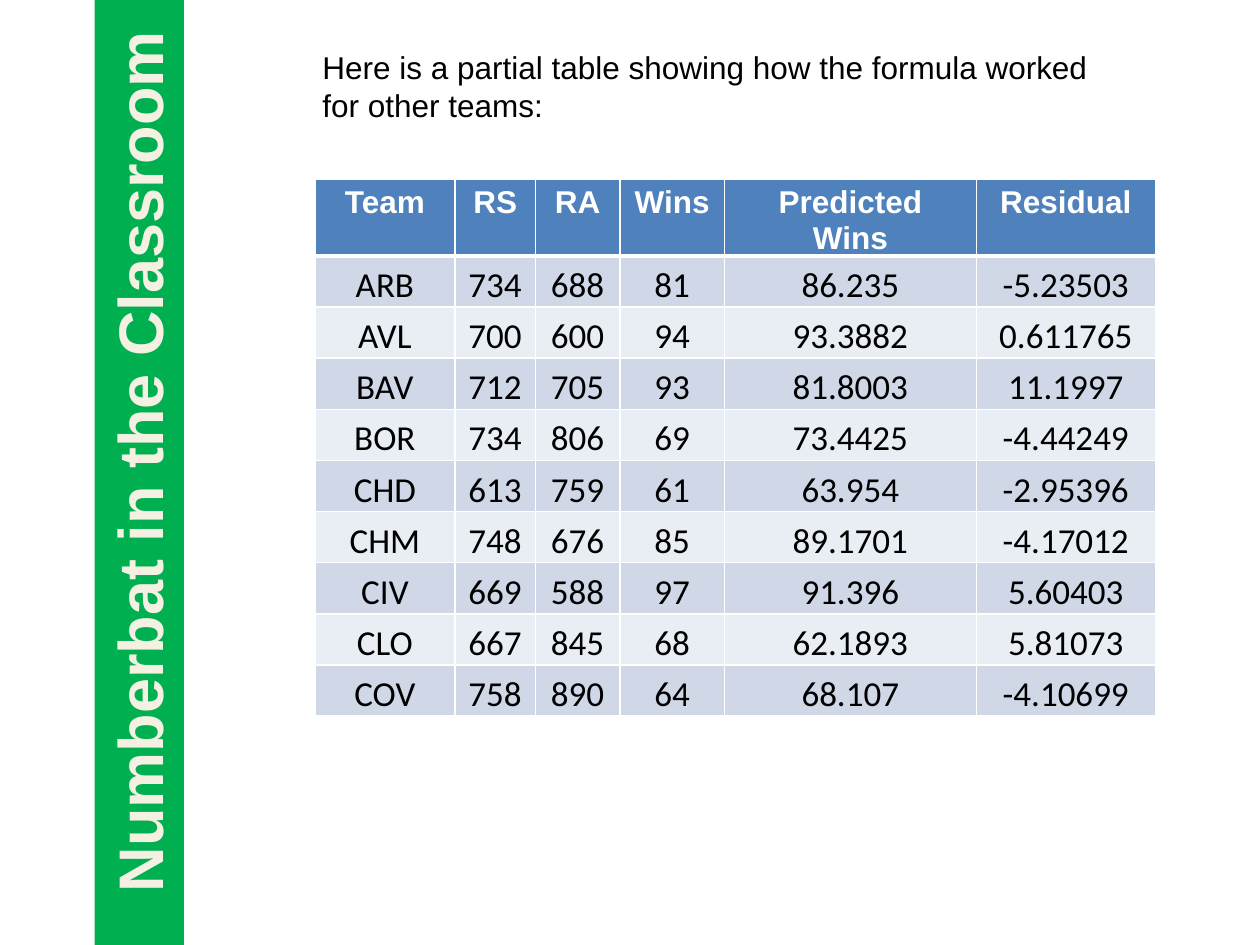
from dataclasses import dataclass

from lxml import etree
from pptx import Presentation
from pptx import util as u
from pptx.dml.color import RGBColor
from pptx.enum import text
from pptx.oxml import ns


@dataclass(frozen=True)
class Theme:
    banner: str = "00B050"
    banner_text: str = "F4F1E3"
    banner_outline: str = "054697"
    header: str = "4F81BD"
    bands: tuple = ("D0D8E8", "E9EDF4")
    light: str = "FFFFFF"
    dark: str = "000000"
    heading_font: str = "Arial"
    body_font: str = "Calibri"
    title_size: int = 36
    text_size: int = 18
    cell_size: int = 20


THEME = Theme()
TITLE = "Numberbat in the Classroom"
INTRO = "Here is a partial table showing how the formula worked for other teams:"
COLUMN_WIDTHS = (1.11, 0.64, 0.67, 0.83, 2, 1.42)
TEAMS = (
    ("Team", "RS", "RA", "Wins", "Predicted Wins", "Residual"),
    ("ARB", "734", "688", "81", "86.235", "-5.23503"),
    ("AVL", "700", "600", "94", "93.3882", "0.611765"),
    ("BAV", "712", "705", "93", "81.8003", "11.1997"),
    ("BOR", "734", "806", "69", "73.4425", "-4.44249"),
    ("CHD", "613", "759", "61", "63.954", "-2.95396"),
    ("CHM", "748", "676", "85", "89.1701", "-4.17012"),
    ("CIV", "669", "588", "97", "91.396", "5.60403"),
    ("CLO", "667", "845", "68", "62.1893", "5.81073"),
    ("COV", "758", "890", "64", "68.107", "-4.10699"),
)
HEADER_FORMAT = {"name": THEME.heading_font, "size": u.Pt(THEME.text_size), "bold": True}
BODY_FORMAT = {"name": THEME.body_font, "size": u.Pt(THEME.cell_size), "bold": False}
HEADER_CELL = {"margin_bottom": 0}
BODY_CELL = {
    "vertical_anchor": text.MSO_ANCHOR.BOTTOM,
    "margin_left": u.Inches(0.01),
    "margin_right": u.Inches(0.01),
    "margin_top": u.Inches(0.01),
    "margin_bottom": 0,
}


def set_values(target, values):
    for name, value in values.items():
        setattr(target, name, value)


def fill_solid(target, color):
    target.fill.solid()
    target.fill.fore_color.rgb = RGBColor.from_string(color)


def write(frame, words, color, font, align):
    para = frame.paragraphs[0]
    para.alignment = align
    span = para.add_run()
    span.text = words
    set_values(span.font, font)
    span.font.color.rgb = RGBColor.from_string(color)
    return span


def make_line(tag, color, points):
    line = etree.Element(ns.qn(tag), w=str(u.Pt(points)))
    fill = etree.SubElement(line, ns.qn("a:solidFill"))
    etree.SubElement(fill, ns.qn("a:srgbClr"), val=color)
    return line


def add_banner(page):
    banner = page.shapes.title
    set_values(banner, {
        "left": u.Inches(-2.73), "top": u.Inches(3.31),
        "width": u.Inches(7.67), "height": u.Inches(0.71), "rotation": 270,
    })
    fill_solid(banner, THEME.banner)
    frame = banner.text_frame
    set_values(frame, {
        "word_wrap": True,
        "vertical_anchor": text.MSO_ANCHOR.TOP,
        "auto_size": text.MSO_AUTO_SIZE.NONE,
    })
    font = {"name": THEME.heading_font, "size": u.Pt(THEME.title_size), "bold": True}
    span = write(frame, TITLE, THEME.banner_text, font, text.PP_ALIGN.CENTER)
    span.font._element.insert(0, make_line("a:ln", THEME.banner_outline, 1))


def add_intro(page):
    box = page.shapes.add_textbox(
        u.Inches(2.46), u.Inches(0.33), u.Inches(6.62), u.Inches(0.71))
    set_values(box.text_frame, {
        "word_wrap": True, "auto_size": text.MSO_AUTO_SIZE.SHAPE_TO_FIT_TEXT,
    })
    font = {"name": THEME.heading_font, "size": u.Pt(THEME.text_size)}
    write(box.text_frame, INTRO, THEME.dark, font, text.PP_ALIGN.LEFT)


def format_cell(cell, words, row):
    is_header = row == 0
    color = THEME.light if is_header else THEME.dark
    font = HEADER_FORMAT if is_header else BODY_FORMAT
    set_values(cell, HEADER_CELL if is_header else BODY_CELL)
    write(cell.text_frame, words, color, font, text.PP_ALIGN.CENTER)
    borders = {
        "a:lnL": 1, "a:lnR": 1,
        "a:lnT": 3 if row == 1 else 1,
        "a:lnB": 3 if is_header else 1,
    }
    properties = cell._tc.get_or_add_tcPr()
    for tag, points in borders.items():
        properties.append(make_line(tag, THEME.light, points))
    fill_solid(cell, THEME.header if is_header else THEME.bands[(row - 1) % 2])


def add_team_table(page):
    table = page.shapes.add_table(
        len(TEAMS), len(COLUMN_WIDTHS),
        u.Inches(2.5), u.Inches(1.42), u.Inches(6.67), u.Inches(4.06)).table
    for column, width in zip(table.columns, COLUMN_WIDTHS):
        column.width = u.Inches(width)
    for row, values in enumerate(TEAMS):
        for column, words in enumerate(values):
            format_cell(table.cell(row, column), words, row)


def main():
    deck = Presentation()
    set_values(deck, {"slide_width": u.Inches(10), "slide_height": u.Inches(7.5)})
    page = deck.slides.add_slide(deck.slide_layouts[5])
    add_team_table(page)
    add_intro(page)
    add_banner(page)
    deck.save("out.pptx")


if __name__ == "__main__":
    main()
